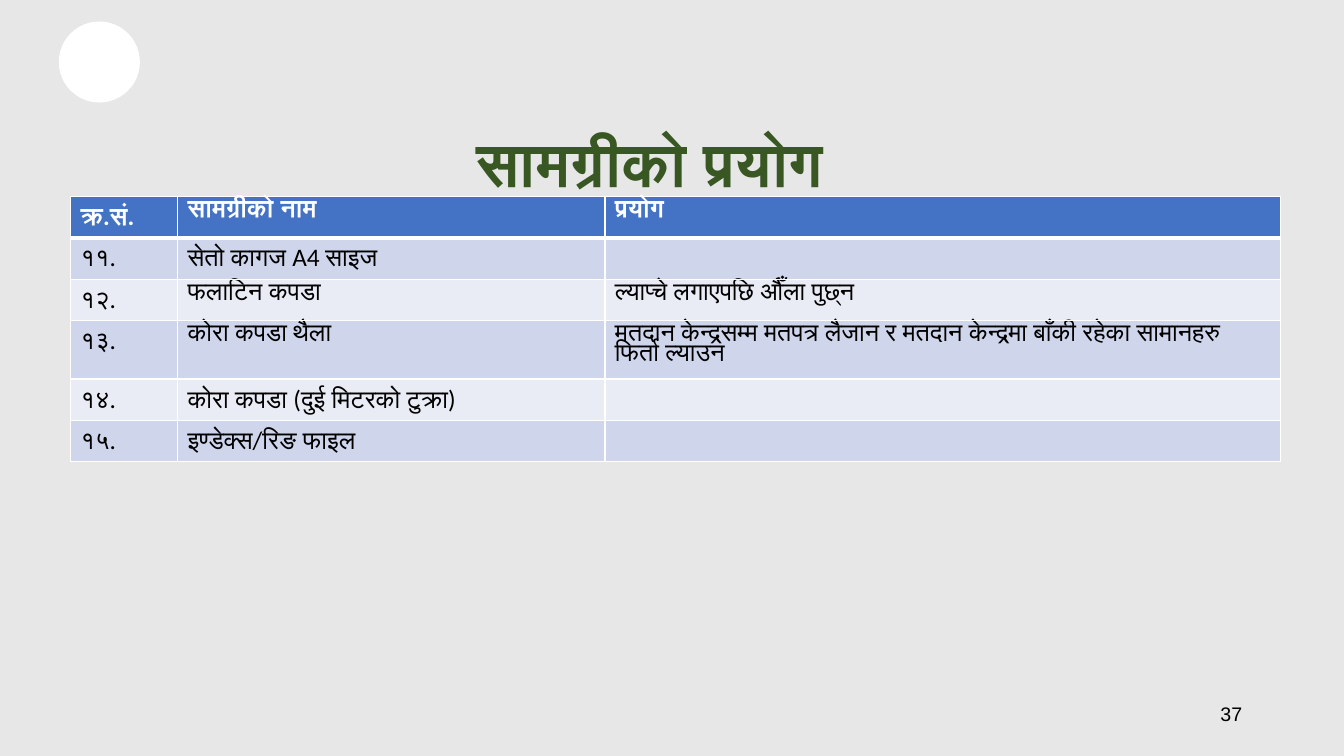
from lxml import etree
from pptx import Presentation
from pptx.dml.color import RGBColor
from pptx.enum.shapes import MSO_SHAPE
from pptx.enum.text import MSO_ANCHOR, MSO_AUTO_SIZE, PP_ALIGN
from pptx.oxml.ns import qn
from pptx.util import Inches, Pt

TITLE = "सामग्रीको प्रयोग"
NUMBER = "37"
ROWS = [
    ("क्र.सं.", "सामग्रीको नाम", "प्रयोग"),
    ("११.", "सेतो कागज A4 साइज", ""),
    ("१२.", "फलाटिन कपडा", "ल्याप्चे लगाएपछि औँला पुछ्न"),
    ("१३.", "कोरा कपडा थैला",
     "मतदान केन्द्रसम्म मतपत्र लैजान र मतदान केन्द्रमा बाँकी रहेका सामानहरु फिर्ता ल्याउन"),
    ("१४.", "कोरा कपडा (दुई मिटरको टुक्रा)", ""),
    ("१५.", "इण्डेक्स/रिङ फाइल", ""),
]
WIDTHS = (1.06, 4.24, 6.7)
HEIGHT = 0.41
TIGHT = (0, 2, 3)

GREY = RGBColor(0xE8, 0xE7, 0xE7)
WHITE = RGBColor(0xFF, 0xFF, 0xFF)
BLACK = RGBColor(0, 0, 0)
GREEN = RGBColor(0x38, 0x57, 0x23)
BLUE = RGBColor(0x44, 0x72, 0xC4)
BANDS = (RGBColor(0xE9, 0xEB, 0xF5), RGBColor(0xCF, 0xD5, 0xEA))
OVAL = MSO_SHAPE.OVAL
TOP, MIDDLE = MSO_ANCHOR.TOP, MSO_ANCHOR.MIDDLE
CENTER, RIGHT = PP_ALIGN.CENTER, PP_ALIGN.RIGHT
NONE = MSO_AUTO_SIZE.NONE


def style(para, name, size, color, bold=False):
    for run in para.runs:
        font = run.font
        font.name, font.size, font.bold = name, Pt(size), bold
        font.color.rgb = color


def border(cell, widths):
    props = cell._tc.get_or_add_tcPr()
    for spot, (side, width) in enumerate(widths.items()):
        line = etree.Element(qn("a:" + side), w=str(Pt(width)))
        fill = etree.SubElement(line, qn("a:solidFill"))
        etree.SubElement(fill, qn("a:srgbClr"), val=str(WHITE))
        props.insert(spot, line)


def add_title(slide):
    title = slide.shapes.title
    title.left, title.top = Inches(1.11), Inches(1.19)
    title.width, title.height = Inches(10.67), Inches(0.83)
    frame = title.text_frame
    frame.text = TITLE
    frame.auto_size = NONE
    frame.vertical_anchor = TOP
    para = frame.paragraphs[0]
    para.alignment = CENTER
    style(para, "Lato", 44, GREEN, True)


def add_circle(slide):
    side = Inches(0.79)
    circle = slide.shapes.add_shape(OVAL, Inches(0.59), Inches(0.22), side, side)
    circle.shadow.inherit = False
    circle.fill.solid()
    circle.fill.fore_color.rgb = WHITE
    circle.line.color.rgb = WHITE
    circle.line.width = Pt(1)


def add_number(slide):
    box = slide.shapes.add_textbox(Inches(9.42), Inches(6.88), Inches(3), Inches(0.4))
    frame = box.text_frame
    frame.word_wrap = True
    frame.vertical_anchor = MIDDLE
    frame.text = NUMBER
    para = frame.paragraphs[0]
    para.alignment = RIGHT
    style(para, "Arial", 14, BLACK)


def add_items(slide):
    table = slide.shapes.add_table(
        len(ROWS), len(WIDTHS), Inches(0.7), Inches(1.95),
        Inches(sum(WIDTHS)), Inches(HEIGHT * len(ROWS))).table
    for column, width in zip(table.columns, WIDTHS):
        column.width = Inches(width)
    for r, row in enumerate(ROWS):
        table.rows[r].height = Inches(HEIGHT)
        head = r == 0
        for c, text in enumerate(row):
            cell = table.cell(r, c)
            cell.text = text
            cell.fill.solid()
            cell.fill.fore_color.rgb = BLUE if head else BANDS[r % 2]
            border(cell, {"lnL": 1, "lnR": 1, "lnT": 3 if r == 1 else 1,
                          "lnB": 3 if head else 1})
            para = cell.text_frame.paragraphs[0]
            if c and r in TIGHT:
                para.line_spacing = 0.8
            style(para, "Calibri", 18, WHITE if head else BLACK, head)


def main():
    deck = Presentation()
    deck.slide_width, deck.slide_height = Inches(13.33), Inches(7.5)
    slide = deck.slides.add_slide(deck.slide_layouts[5])
    slide.background.fill.solid()
    slide.background.fill.fore_color.rgb = GREY
    add_circle(slide)
    add_number(slide)
    add_title(slide)
    add_items(slide)
    deck.save("out.pptx")


if __name__ == "__main__":
    main()
